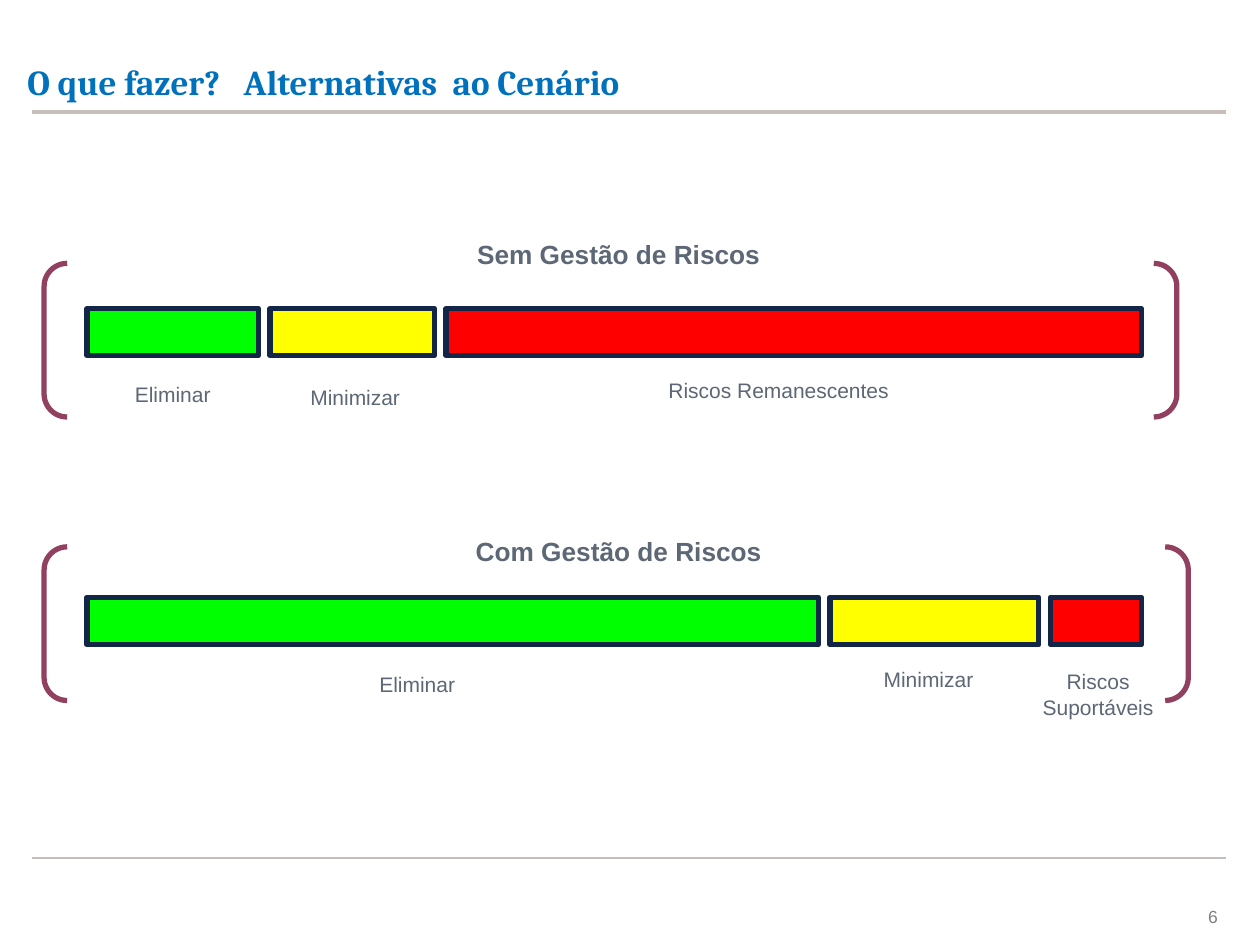
from lxml.etree import SubElement
from pptx import Presentation
from pptx.dml.color import RGBColor
from pptx.enum.shapes import MSO_CONNECTOR, MSO_SHAPE
from pptx.enum.text import MSO_ANCHOR, PP_ALIGN
from pptx.oxml.ns import qn
from pptx.util import Pt

LABEL = dict(name="Arial", size=12, color="5D6775")
HEAD = dict(name="Arial", size=15, color="5D6775", bold=True)
TITLE = dict(name="Cambria", size=20, color="0071BD", bold=True)
NUMBER = dict(name="Arial", size=10, color="808080")

LEFT, GAP = 49.7, 6.6
FILLS = "00FF00", "FFFF00", "FF0000"

# Labels: text, centre, top, width, height
PANELS = [
    dict(head="Sem Gestão de Riscos", head_top=132.5,
         top=176.4, height=26.8, widths=(98, 94, 397.4),
         frame=(25.2, 150.5, 647.3, 87.8),
         labels=[("Eliminar", 98.7, 214.6, 140, 21.6),
                 ("Minimizar", 203, 216, 140, 21.6),
                 ("Riscos Remanescentes", 445, 212.4, 370, 21.6)]),
    dict(head="Com Gestão de Riscos", head_top=302.4,
         top=341.3, height=27.2, widths=(418, 119.4, 52),
         frame=(25.2, 312.5, 653.8, 87.8),
         labels=[("Eliminar", 238.4, 380.2, 140, 21.6),
                 ("Minimizar", 530.6, 377.3, 140, 21.6),
                 ("Riscos\vSuportáveis", 627.5, 378.7, 132, 36.7)]),
]


def rgb(code):
    return RGBColor.from_string(code)


class Deck:
    def __init__(self):
        self.file = Presentation()
        self.file.slide_width, self.file.slide_height = Pt(720), Pt(540)
        self.slide = self.file.slides.add_slide(self.file.slide_layouts[6])
        self.shapes = self.slide.shapes

    def rule(self, y, width):
        line = self.shapes.add_connector(
            MSO_CONNECTOR.STRAIGHT, Pt(18), Pt(y), Pt(700.5), Pt(y))
        line.line.color.rgb = rgb("C7BEBB")
        line.line.width = Pt(width)
        SubElement(line._element.spPr, qn("a:effectLst"))

    def shape(self, kind, box, edge, fill=None):
        shape = self.shapes.add_shape(kind, *map(Pt, box))
        shape.shadow.inherit = False
        shape.line.color.rgb = rgb(edge)
        shape.line.width = Pt(3)
        if fill:
            shape.fill.solid()
            shape.fill.fore_color.rgb = rgb(fill)
        else:
            shape.fill.background()
        return shape

    def text(self, words, box, style, align=PP_ALIGN.CENTER,
             anchor=MSO_ANCHOR.TOP, wrap=True, tabs=(), space=None):
        frame = self.shapes.add_textbox(*map(Pt, box)).text_frame
        frame.word_wrap, frame.vertical_anchor = wrap, anchor
        para = frame.paragraphs[0]
        para.text, para.alignment, para.line_spacing = words, align, space
        if tabs:
            stops = SubElement(para._p.get_or_add_pPr(), qn("a:tabLst"))
            for stop in tabs:
                SubElement(stops, qn("a:tab"), pos=str(Pt(stop)), algn="l")
        for run in para.runs:
            for key, value in style.items():
                if key == "color":
                    run.font.color.rgb = rgb(value)
                else:
                    setattr(run.font, key, Pt(value) if key == "size" else value)

    def panel(self, head, head_top, top, height, widths, frame, labels):
        """Draw one headed row of bars with its labels and brackets."""
        self.text(head, (175.7, head_top, 355.7, 25.2), HEAD)
        x = LEFT
        for width, fill in zip(widths, FILLS):
            self.shape(MSO_SHAPE.RECTANGLE, (x, top, width, height), "132647", fill)
            x += width + GAP
        for words, mid, y, width, tall in labels:
            self.text(words, (mid - width / 2, y, width, tall), LABEL)
        pair = self.shape(MSO_SHAPE.DOUBLE_BRACKET, frame, "914060")
        pair.adjustments[0] = 0.15


def main():
    deck = Deck()
    deck.rule(64, 2)
    deck.rule(490.3, 1.25)
    deck.text("6", (683.3, 514, 26.6, 19.4), NUMBER, PP_ALIGN.LEFT, wrap=False)
    deck.text("O que fazer?\tAlternativas\tao Cenário", (8.6, 27.4, 687, 35.3),
              TITLE, PP_ALIGN.LEFT, MSO_ANCHOR.BOTTOM, tabs=(123.6, 243), space=0.9)
    for panel in PANELS:
        deck.panel(**panel)
    deck.file.save("out.pptx")


if __name__ == "__main__":
    main()
